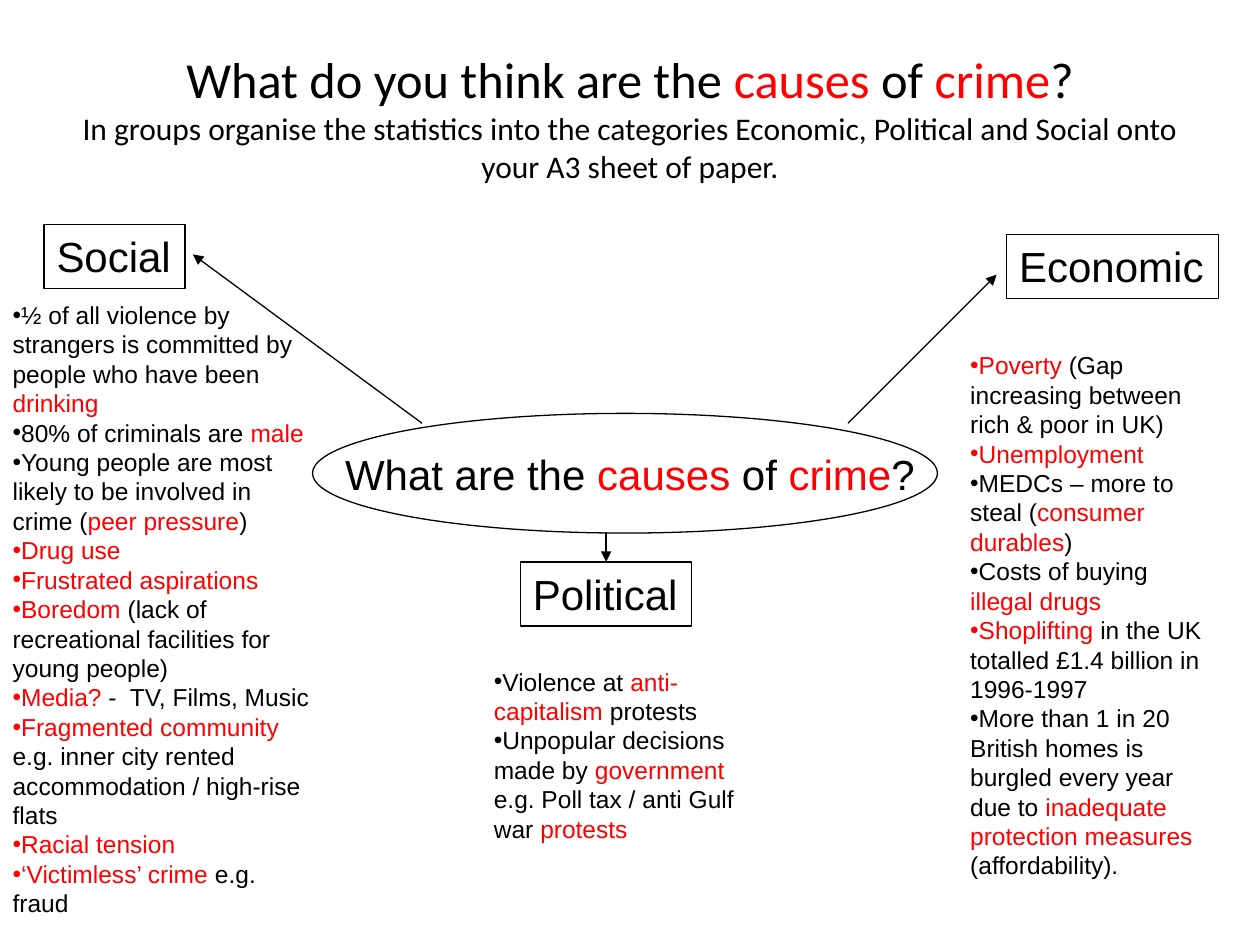
from lxml.etree import SubElement
from pptx import Presentation
from pptx.dml.color import RGBColor
from pptx.enum.shapes import MSO_CONNECTOR as Connector, MSO_SHAPE as Shape
from pptx.enum.text import MSO_ANCHOR as Anchor, MSO_AUTO_SIZE as AutoSize, PP_ALIGN as Align
from pptx.oxml.ns import qn
from pptx.util import Pt

BLACK = RGBColor(0x00, 0x00, 0x00)
RED = RGBColor(0xFF, 0x00, 0x00)
WHITE = RGBColor(0xFF, 0xFF, 0xFF)

# Asterisks enclose the words in red
SOCIAL = [
    "½ of all violence by strangers is committed by people who have been *drinking*",
    "80% of criminals are *male*",
    "Young people are most likely to be involved in crime (*peer pressure*)",
    "*Drug use*",
    "*Frustrated aspirations*",
    "*Boredom* (lack of recreational facilities for young people)",
    "*Media?* -  TV, Films, Music",
    "*Fragmented community* e.g. inner city rented accommodation / high-rise flats",
    "*Racial tension*",
    "*‘Victimless’ crime *e.g. fraud",
]
ECONOMIC = [
    "*Poverty* (Gap increasing between rich & poor in UK)",
    "*Unemployment*",
    "MEDCs – more to steal (*consumer durables*)",
    "Costs of buying *illegal drugs*",
    "*Shoplifting* in the UK totalled £1.4 billion in 1996-1997",
    "More than 1 in 20 British homes is burgled every year due to "
    "*inadequate protection measures *(affordability).",
]
POLITICAL = [
    "Violence at *anti-capitalism* protests",
    "Unpopular decisions made by *government* e.g. Poll tax / anti Gulf war *protests*",
]


class CausesSlide:
    """Holds the style and the slide that is being built."""

    title_font, body_font = "Calibri", "Arial"
    title_size, subtitle_size, label_size, list_size = 28.8, 18, 24, 14
    line_width = Pt(0.75)
    label_height = 36.7

    def __init__(self, slide):
        self.slide = slide

    def set_format(self, target, **values):
        for name, value in values.items():
            setattr(target, name, value)

    def place(self, shape, left, top, width, height):
        self.set_format(shape, left=Pt(left), top=Pt(top), width=Pt(width), height=Pt(height))

    def add_runs(self, paragraph, marked_text, font, size):
        for index, words in enumerate(marked_text.split("*")):
            if words:
                run = paragraph.add_run()
                run.text = words
                self.set_format(run.font, name=font, size=Pt(size), bold=False)
                run.font.color.rgb = RED if index % 2 else BLACK

    def title(self, heading, instruction, *box):
        shape = self.slide.shapes.title
        self.place(shape, *box)
        self.set_format(shape.text_frame, auto_size=AutoSize.NONE, word_wrap=True,
                        vertical_anchor=Anchor.MIDDLE)
        paragraph = shape.text_frame.paragraphs[0]
        paragraph.alignment = Align.CENTER
        self.add_runs(paragraph, heading, self.title_font, self.title_size)
        paragraph.add_line_break()
        # The break takes the heading's size so that it does not raise the line
        line_break = paragraph._p.find(qn("a:br"))
        SubElement(line_break, qn("a:rPr"), sz=str(round(self.title_size * 100)))
        self.add_runs(paragraph, instruction, self.title_font, self.subtitle_size)

    def outline(self, shape):
        shape.shadow.inherit = False
        shape.line.color.rgb = BLACK
        shape.line.width = self.line_width

    def one_line(self, shape, marked_text):
        self.set_format(shape.text_frame, word_wrap=False, vertical_anchor=Anchor.TOP)
        paragraph = shape.text_frame.paragraphs[0]
        paragraph.alignment = Align.LEFT
        self.add_runs(paragraph, marked_text, self.body_font, self.label_size)

    def label(self, text, left, top, width):
        shape = self.slide.shapes.add_shape(
            Shape.RECTANGLE, Pt(left), Pt(top), Pt(width), Pt(self.label_height))
        shape.fill.background()
        self.outline(shape)
        self.one_line(shape, text)
        return shape

    def ellipse(self, *box):
        shape = self.slide.shapes.add_shape(Shape.OVAL, *map(Pt, box))
        shape.fill.solid()
        shape.fill.fore_color.rgb = WHITE
        self.outline(shape)

    def question(self, marked_text, *box):
        self.one_line(self.slide.shapes.add_textbox(*map(Pt, box)), marked_text)

    def bullets(self, placeholder_index, items, *box):
        shape = self.slide.placeholders[placeholder_index]
        self.place(shape, *box)
        frame = shape.text_frame
        self.set_format(frame, auto_size=AutoSize.NONE, word_wrap=True,
                        vertical_anchor=Anchor.TOP)
        for index, item in enumerate(items):
            paragraph = frame.add_paragraph() if index else frame.paragraphs[0]
            self.set_format(paragraph, alignment=Align.LEFT, space_before=Pt(0),
                            space_after=Pt(0), line_spacing=1.0)
            properties = paragraph._p.get_or_add_pPr()
            properties.set("marL", "0")
            properties.set("indent", "0")
            SubElement(properties, qn("a:buFont"), typeface=self.body_font)
            SubElement(properties, qn("a:buChar"), char="•")
            self.add_runs(paragraph, item, self.body_font, self.list_size)

    def arrow(self, *ends):
        connector = self.slide.shapes.add_connector(Connector.STRAIGHT, *map(Pt, ends))
        connector.line.color.rgb = BLACK
        connector.line.width = self.line_width
        line_properties = connector._element.spPr.find(qn("a:ln"))
        SubElement(line_properties, qn("a:tailEnd"), type="triangle")
        SubElement(connector._element.spPr, qn("a:effectLst"))
        return connector


def main():
    presentation = Presentation()
    presentation.slide_width, presentation.slide_height = Pt(720), Pt(540)
    comparison_layout = presentation.slide_layouts[4]
    slide = presentation.slides.add_slide(comparison_layout)
    causes = CausesSlide(slide)

    # Title
    causes.title("What do you think are the *causes* of *crime*?",
                 "In groups organise the statistics into the categories Economic, "
                 "Political and Social onto your A3 sheet of paper.", 36, 21.6, 648, 90)

    # Lists of causes
    causes.bullets(2, SOCIAL, 0, 167.8, 184.3, 409)
    causes.bullets(4, ECONOMIC, 547.2, 196.6, 153.4, 325.4)
    causes.bullets(3, POLITICAL, 275, 377.3, 170, 108)

    # Category labels
    causes.label("Social", 25.2, 128.2, 80.6)
    causes.label("Economic", 575.3, 133.9, 121)
    political = causes.label("Political", 297.4, 321.1, 97.9)

    # Central question
    causes.ellipse(178.6, 236.2, 357.1, 68.4)
    causes.question("What are the *causes* of *crime*?", 190.1, 252.7, 339.8, 36)

    # Arrows to the categories
    causes.arrow(241.2, 241.9, 110.2, 145.4)
    causes.arrow(484.6, 241.9, 569.5, 157)
    middle = political.left.pt + political.width.pt / 2
    causes.arrow(middle, 304, middle, 321.1).end_connect(political, 0)

    # Unused placeholders
    for placeholder in list(slide.placeholders):
        if not placeholder.text_frame.text:
            placeholder._element.getparent().remove(placeholder._element)

    presentation.save("out.pptx")


if __name__ == "__main__":
    main()
